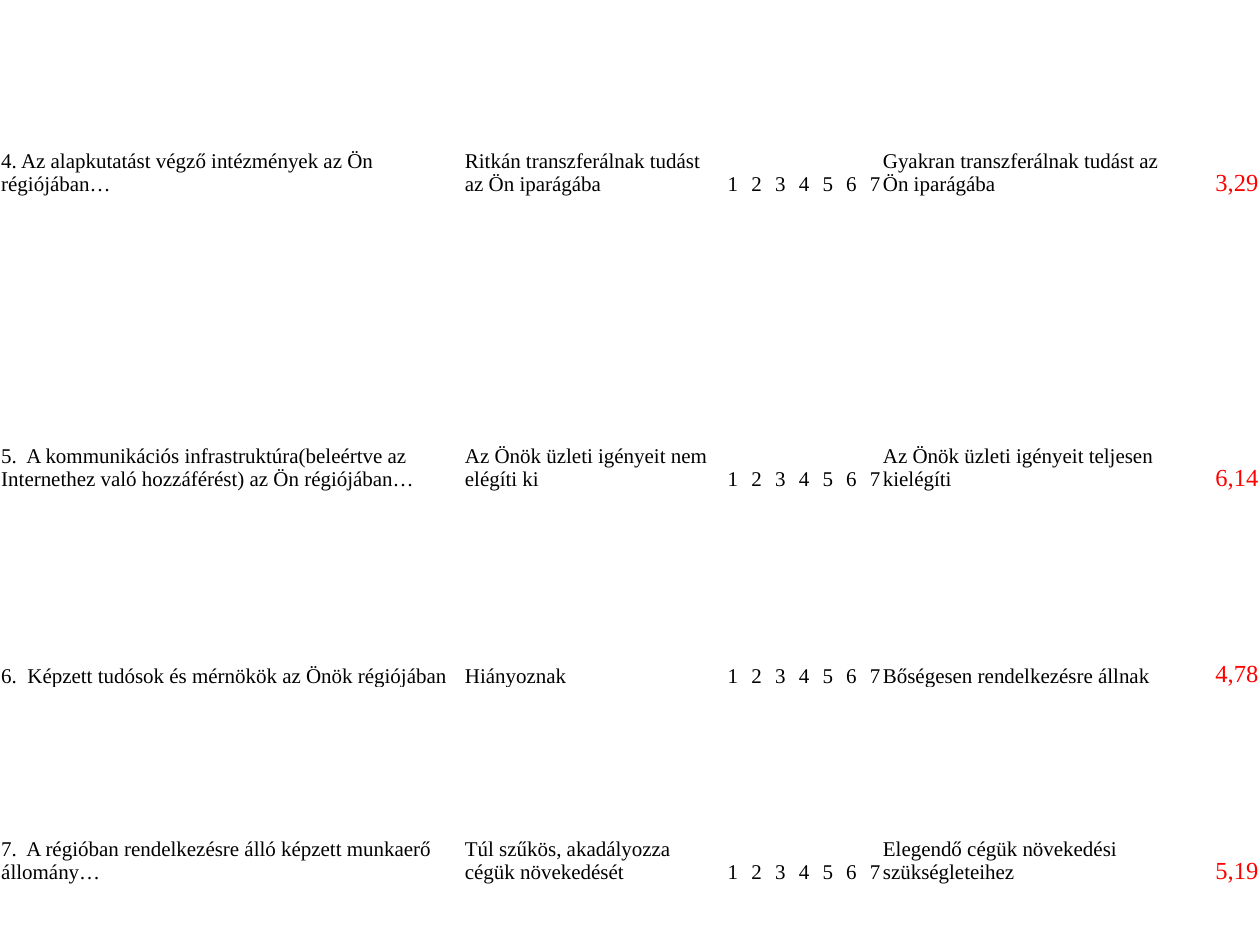
from dataclasses import dataclass

from pptx import Presentation
from pptx.dml.color import RGBColor
from pptx.enum.text import MSO_ANCHOR, PP_ALIGN
from pptx.util import Inches, Pt


@dataclass(frozen=True)
class Theme:
    font: str = "Times New Roman"
    ink: RGBColor = RGBColor(0, 0, 0)
    mark: RGBColor = RGBColor(255, 0, 0)
    body: int = 12
    score: int = 14
    inset: float = 0.01


SCALE = [str(n) for n in range(1, 8)]
COLS = [0.368, 0.2] + [0.132 / len(SCALE)] * len(SCALE) + [0.235, 0.065]
UNIT = 0.104  # share of the slide's height
ROWS = [2, 3, 2, 2]  # in units

# question, low end, high end, mean score
ITEMS = [
    ("4. Az alapkutatást végző intézmények az Ön régiójában…",
     "Ritkán transzferálnak tudást az Ön iparágába",
     "Gyakran transzferálnak tudást az Ön iparágába", "3,29"),
    ("5.  A kommunikációs infrastruktúra(beleértve az Internethez való "
     "hozzáférést) az Ön régiójában…",
     "Az Önök üzleti igényeit nem elégíti ki",
     "Az Önök üzleti igényeit teljesen kielégíti", "6,14"),
    ("6.  Képzett tudósok és mérnökök az Önök régiójában",
     "Hiányoznak", "Bőségesen rendelkezésre állnak", "4,78"),
    ("7.  A régióban rendelkezésre álló képzett munkaerő állomány…",
     "Túl szűkös, akadályozza cégük növekedését",
     "Elegendő cégük növekedési szükségleteihez", "5,19"),
]


class Deck:
    def __init__(self, theme):
        self.theme = theme
        self.prs = Presentation()
        self.prs.slide_width, self.prs.slide_height = Inches(10), Inches(7.5)
        self.slide = self.prs.slides.add_slide(self.prs.slide_layouts[6])

    def table(self, cols, rows):
        """Add a plain table; cols and rows are shares of the slide's size."""
        wide, high = self.prs.slide_width, self.prs.slide_height
        grid = self.slide.shapes.add_table(
            len(rows), len(cols), 0, 0,
            int(sum(cols) * wide), int(sum(rows) * high)).table
        grid.first_row = grid.horz_banding = False
        for col, share in zip(grid.columns, cols):
            col.width = int(share * wide)
        for row, share in zip(grid.rows, rows):
            row.height = int(share * high)
        return grid

    def cell(self, cell, text, right=False, score=False):
        look = self.theme
        cell.fill.background()
        cell.vertical_anchor = MSO_ANCHOR.BOTTOM
        cell.margin_left = cell.margin_right = Inches(look.inset)
        cell.margin_top, cell.margin_bottom = Inches(look.inset), 0
        para = cell.text_frame.paragraphs[0]
        para.alignment = PP_ALIGN.RIGHT if right else PP_ALIGN.LEFT
        run = para.add_run()
        run.text = text
        run.font.name = look.font
        run.font.size = Pt(look.score if score else look.body)
        run.font.color.rgb = look.mark if score else look.ink


def main():
    deck = Deck(Theme())
    grid = deck.table(COLS, [n * UNIT for n in ROWS])
    for row, (ask, low, high, mean) in zip(grid.rows, ITEMS):
        for cell, text in zip(row.cells, [ask, low, *SCALE, high, mean]):
            score = text == mean
            deck.cell(cell, text, score or text in SCALE, score)
    deck.prs.save("out.pptx")


if __name__ == "__main__":
    main()
